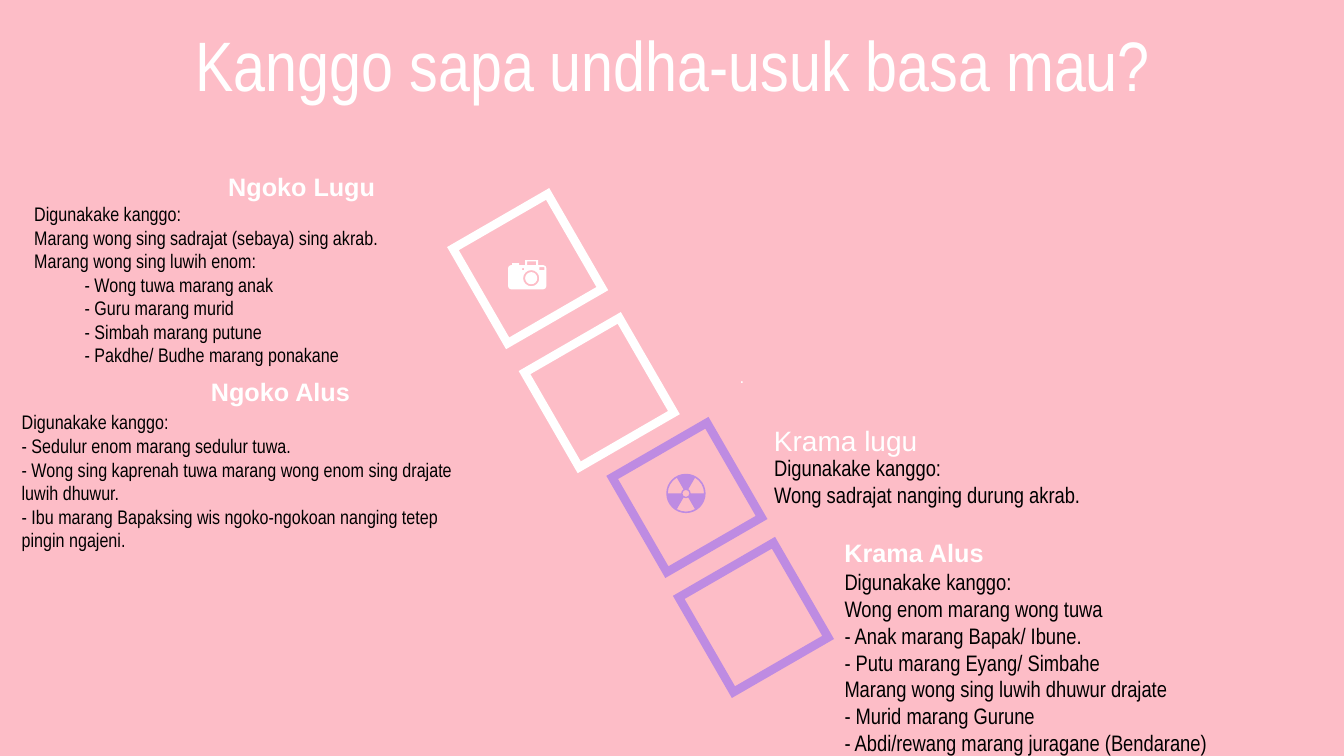
import math

import lxml.etree
import pptx
import pptx.dml.color
import pptx.enum.shapes
import pptx.enum.text
import pptx.oxml.ns
import pptx.util

Pt = pptx.util.Pt
RGB = pptx.dml.color.RGBColor
ALIGN = pptx.enum.text.PP_ALIGN
ANCHOR = pptx.enum.text.MSO_ANCHOR
FIT = pptx.enum.text.MSO_AUTO_SIZE
SHAPE = pptx.enum.shapes.MSO_SHAPE
qn = pptx.oxml.ns.qn

PINK = RGB(0xFD, 0xBD, 0xC7)
WHITE = RGB(0xFF, 0xFF, 0xFF)
BLACK = RGB(0, 0, 0)
VIOLET = RGB(0xBE, 0x8B, 0xE2)

TITLE = "Kanggo sapa undha-usuk basa mau?"

# heading, its box and format; body lines, their box and size
GROUPS = [
    ("Krama lugu", (545.76, 298.8, 249.84, 31.68),
     dict(size=20),
     ["Digunakake kanggo:", "Wong sadrajat nanging durung akrab."],
     (545.9, 320.76, 396.72, 46.08), 16),
    ("Ngoko Alus", (-0.72, 264.96, 257.76, 28.8),
     dict(size=18, bold=True, align=ALIGN.RIGHT),
     ["Digunakake kanggo:",
      "- Sedulur enom marang sedulur tuwa.",
      "- Wong sing kaprenah tuwa marang wong enom sing drajate luwih dhuwur.",
      "- Ibu marang Bapaksing wis ngoko-ngokoan nanging tetep pingin ngajeni."],
     (8.4, 289.6, 344.88, 108.72), 14),
    ("Ngoko Lugu", (17.28, 118.8, 257.76, 28.8),
     dict(size=18, bold=True, align=ALIGN.RIGHT),
     ["Digunakake kanggo:",
      "Marang wong sing sadrajat (sebaya) sing akrab.",
      "Marang wong sing luwih enom:",
      "\t- Wong tuwa marang anak",
      "\t- Guru marang murid",
      "\t- Simbah marang putune",
      "\t- Pakdhe/ Budhe marang ponakane"],
     (17.4, 140.8, 521.28, 140.4), 14),
    ("Krama Alus", (596.16, 380.16, 249.84, 28.8),
     dict(size=18, bold=True),
     ["Digunakake kanggo:",
      "Wong enom marang wong tuwa",
      "- Anak marang Bapak/ Ibune.",
      "- Putu marang Eyang/ Simbahe",
      "Marang wong sing luwih dhuwur drajate",
      "- Murid marang Gurune",
      "- Abdi/rewang marang juragane (Bendarane)"],
     (596.16, 402.2, 428.4, 143.28), 16),
]

SIDE = 84.24
FRAMES = [(334.8, 149.76, WHITE), (496.08, 398.88, VIOLET),
          (385.92, 238.32, WHITE), (448.56, 313.2, VIOLET)]


def add_text(lines, box=None, frame=None, size=14, face="Arial", color=WHITE,
             bold=False, align=ALIGN.LEFT, anchor=ANCHOR.TOP,
             fit=FIT.SHAPE_TO_FIT_TEXT, space=None, before=None):
    """Fill a new box, or add lines to a given frame."""
    fresh = frame is None
    if fresh:
        frame = slide.shapes.add_textbox(*map(Pt, box)).text_frame
        frame.word_wrap = True
        frame.auto_size = fit
        frame.vertical_anchor = anchor
    for num, line in enumerate(lines):
        para = frame.paragraphs[0] if fresh and num == 0 else frame.add_paragraph()
        para.alignment = align
        if space:
            para.line_spacing = space
        if before:
            para.space_before = Pt(before)
        run = para.add_run()
        run.text = line
        run.font.size = Pt(size)
        run.font.name = face
        run.font.bold = bold
        run.font.color.rgb = color
    return frame


def paint(shape, color):
    shape.shadow.inherit = False
    shape.fill.solid()
    shape.fill.fore_color.rgb = color
    shape.line.fill.background()


def arc(mid, rad, start=0, end=360):
    """Start point, then one curve (two handles and an end) per quarter turn."""
    parts = math.ceil(abs(end - start) / 90)
    step = math.radians(end - start) / parts
    pull = 4 / 3 * math.tan(step / 4)

    def spot(turn, bend=0):
        return (mid[0] + rad * (math.cos(turn) - bend * math.sin(turn)),
                mid[1] + rad * (math.sin(turn) + bend * math.cos(turn)))

    turns = [math.radians(start) + step * n for n in range(parts + 1)]
    return [[spot(turns[0])]] + [[spot(a, pull), spot(b, -pull), spot(b)]
                                 for a, b in zip(turns, turns[1:])]


def lines(*points):
    return [[point] for point in points]


def rect(left, top, right, bottom):
    return lines((left, top), (right, top), (right, bottom), (left, bottom))


def draw(loops, color):
    """Draw closed loops as one outline; inner loops are holes."""
    loops = [[[(Pt(x), Pt(y)) for x, y in leg] for leg in loop] for loop in loops]
    pen = slide.shapes.build_freeform(*loops[0][0][-1], scale=1.0)
    for num, loop in enumerate(loops):
        if num:
            pen.move_to(*loop[0][-1])
        pen.add_line_segments([leg[-1] for leg in loop[1:]], close=True)
    shape = pen.convert_to_shape()
    legs = [leg for loop in loops for leg in loop[1:]]
    for node, leg in zip(list(shape._element.iter(qn("a:lnTo"))), legs):
        if len(leg) == 3:
            node.tag = qn("a:cubicBezTo")
            for child in list(node):
                node.remove(child)
            for x, y in leg:
                lxml.etree.SubElement(node, qn("a:pt"), x=str(x - shape.left),
                                      y=str(y - shape.top))
    paint(shape, color)


deck = pptx.Presentation()
deck.slide_width, deck.slide_height = Pt(960), Pt(540)
slide = deck.slides.add_slide(deck.slide_layouts[6])
slide.background.fill.solid()
slide.background.fill.fore_color.rgb = PINK

add_text([TITLE], (25.2, 22.32, 911.52, 56.88), size=50, face="Arial Narrow",
         align=ALIGN.CENTER, anchor=ANCHOR.MIDDLE, fit=FIT.NONE,
         space=0.8, before=10)

for left, top, color in FRAMES:
    tile = slide.shapes.add_shape(SHAPE.FRAME, Pt(left), Pt(top), Pt(SIDE), Pt(SIDE))
    tile.adjustments[0] = 0.073
    tile.rotation = 330
    paint(tile, color)

for head, spot, style, words, box, size in GROUPS:
    add_text([head], spot, **style)
    body = add_text(words, box, size=size, face="Arial Narrow", color=BLACK)
    if head == "Ngoko Lugu":
        add_text(["."], frame=body, size=12, align=ALIGN.RIGHT)

# Radiation sign: a disc with a hub and three blades cut out
HUB = (489.96, 352.44)
blades = [arc(HUB, 12.96, turn, turn + 60) + arc(HUB, 3.4, turn + 60, turn)
          for turn in (60, 180, 300)]
draw([arc(HUB, 14.04), arc(HUB, 2.5)] + blades, VIOLET)

# Camera: body with button and finder, then its openings and lens
LENS = (379.44, 198.72)
LEFT, TOP, RIGHT, BOTTOM, CURVE = 362.88, 189.36, 390.24, 206.64, 2.2
case = (arc((LEFT + CURVE, TOP + CURVE), CURVE, 180, 270)
        + lines((365.76, TOP), (365.76, 187.92), (370.8, 187.92), (370.8, TOP),
                (375.12, TOP), (375.12, 185.76), (384.48, 185.76), (384.48, TOP))
        + arc((RIGHT - CURVE, TOP + CURVE), CURVE, 270, 360)
        + arc((RIGHT - CURVE, BOTTOM - CURVE), CURVE, 0, 90)
        + arc((LEFT + CURVE, BOTTOM - CURVE), CURVE, 90, 180))
draw([case, rect(376.56, 186.8, 382.9, TOP), rect(372.96, 191.52, 374.4, 192.96),
      rect(385.2, 190.8, 388.8, 192.96), arc(LENS, 5.76), arc(LENS, 4.32)], WHITE)

deck.save("out.pptx")
